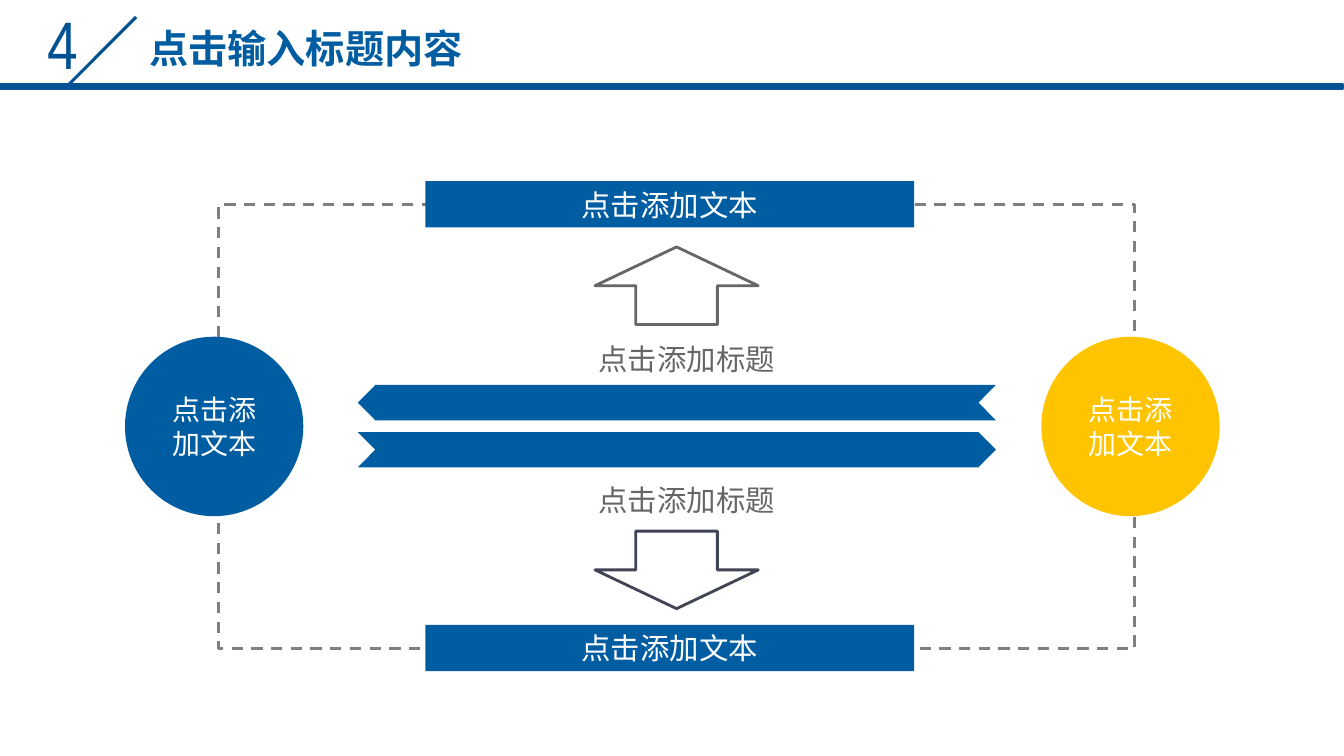
from pptx import Presentation
from pptx.dml.color import RGBColor
from pptx.enum import dml, shapes, text
from pptx.oxml import ns, xmlchemy
from pptx.util import Pt

CJK = "Noto Sans CJK SC"
BLUE, NAVY, YELLOW = "005DA2", "005292", "FFC400"
GREY, SLATE, DASH_GREY, WHITE = "666666", "414455", "7F7F7F", "FFFFFF"


def color(target, value):
    target.rgb = RGBColor.from_string(value)


def set_text(shape, words, size, hue, face=CJK, align=text.PP_ALIGN.LEFT,
             anchor=text.MSO_ANCHOR.TOP, wrap=True, bold=False):
    frame = shape.text_frame
    frame.text = words
    frame.word_wrap = wrap
    frame.auto_size = text.MSO_AUTO_SIZE.NONE
    frame.vertical_anchor = anchor
    paragraph = frame.paragraphs[0]
    paragraph.alignment = align
    font = paragraph.font
    font.name, font.size, font.bold = face, Pt(size), bold
    color(font.color, hue)
    # East Asian typeface
    east = xmlchemy.OxmlElement("a:ea")
    east.set("typeface", face)
    paragraph.runs[0].font.name = face
    paragraph.runs[0].font._element.find(ns.qn("a:latin")).addnext(east)


def style(shape, fill=None, line=None):
    shape.shadow.inherit = False
    if fill:
        shape.fill.solid()
        color(shape.fill.fore_color, fill)
    else:
        shape.fill.background()
    if line:
        color(shape.line.color, line)
        shape.line.width = Pt(2)
    else:
        shape.line.fill.background()
    return shape


def add_block(slide, kind, box, fill=None, line=None):
    return style(slide.shapes.add_shape(kind, *map(Pt, box)), fill, line)


def add_filled_label(slide, kind, box, fill, size):
    block = add_block(slide, kind, box, fill)
    set_text(block, "点击添加文本", size, WHITE, align=text.PP_ALIGN.CENTER,
             anchor=text.MSO_ANCHOR.MIDDLE)


def add_caption(slide, words, box, size, hue, face=CJK):
    caption = slide.shapes.add_textbox(*map(Pt, box))
    set_text(caption, words, size, hue, face, wrap=False)


def add_ribbon(slide, tail, tip, top):
    """Notched ribbon pointing from x = tail to x = tip."""
    height = 25.2
    notch = 12.5 if tip > tail else -12.5
    middle, bottom = top + height / 2, top + height
    outline = [(tip - notch, top), (tip, middle), (tip - notch, bottom),
               (tail, bottom), (tail + notch, middle)]
    builder = slide.shapes.build_freeform(Pt(tail), Pt(top))
    builder.add_line_segments([(Pt(x), Pt(y)) for x, y in outline], close=True)
    style(builder.convert_to_shape(), BLUE)


def add_header(slide):
    add_caption(slide, "4", (26.6, -2.2, 24.5, 65.5), 48, NAVY, "Arial Narrow")
    slash = slide.shapes.add_connector(
        shapes.MSO_CONNECTOR.STRAIGHT, Pt(97.2), Pt(12.2), Pt(49), Pt(60.5))
    color(slash.line.color, NAVY)
    slash.line.width = Pt(2.25)
    slash._element.spPr.append(xmlchemy.OxmlElement("a:effectLst"))
    add_block(slide, shapes.MSO_SHAPE.RECTANGLE, (0, 60, 959, 3.6), NAVY, NAVY)

    title = slide.shapes.title
    title.left, title.top, title.width, title.height = map(
        Pt, (89.3, 13.7, 258.5, 41))
    set_text(title, "点击输入标题内容", 28, BLUE, align=text.PP_ALIGN.CENTER,
             anchor=text.MSO_ANCHOR.MIDDLE, wrap=False, bold=True)


def main():
    deck = Presentation()
    deck.slide_width, deck.slide_height = Pt(960), Pt(540)
    slide = deck.slides.add_slide(deck.slide_layouts[5])
    kinds = shapes.MSO_SHAPE

    add_header(slide)

    # Dashed loop with a circle on each side
    loop = add_block(slide, kinds.RECTANGLE, (156.2, 146.2, 654.5, 316.8),
                     line=DASH_GREY)
    loop.line.dash_style = dml.MSO_LINE.DASH
    for left, fill in ((89.3, BLUE), (743.8, YELLOW)):
        add_filled_label(slide, kinds.OVAL, (left, 240.5, 127.4, 128.2), fill, 20)

    # Upper and lower halves: bar, arrow and caption
    halves = ((129.4, kinds.UP_ARROW, 176.4, GREY, 239.8),
              (446.4, kinds.DOWN_ARROW, 379.4, SLATE, 340.6))
    for bar_top, arrow, arrow_top, outline, caption_top in halves:
        add_filled_label(slide, kinds.RECTANGLE, (303.8, bar_top, 349.2, 33.1),
                         BLUE, 21)
        add_block(slide, arrow, (425, arrow_top, 116.6, 55.4), line=outline)
        add_caption(slide, "点击添加标题", (420.5, caption_top, 143.3, 33.1), 21, GREY)

    # Opposed ribbons
    left, right = 255.6, 711.4
    add_ribbon(slide, right, left, 275)
    add_ribbon(slide, left, right, 308.6)

    deck.save("out.pptx")


if __name__ == "__main__":
    main()
